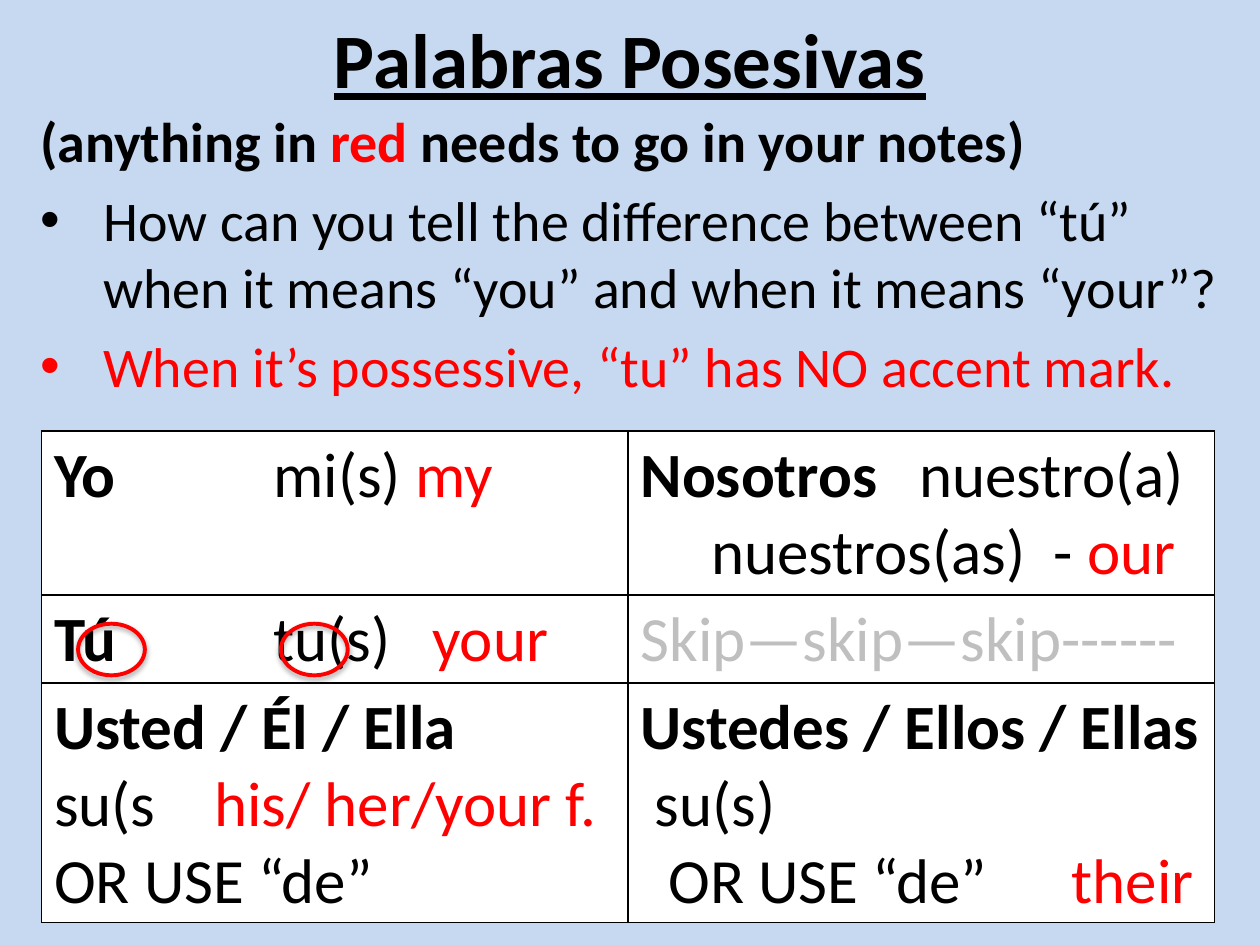
from dataclasses import dataclass

from lxml.etree import SubElement
from pptx import Presentation
from pptx.dml.color import RGBColor
from pptx.enum.shapes import MSO_SHAPE as Shape
from pptx.enum.text import MSO_ANCHOR as Anchor, PP_ALIGN as Align
from pptx.oxml.ns import qn
from pptx.util import Inches, Pt


@dataclass(frozen=True)
class Theme:
    font: str = "Calibri"
    title_size: int = 44
    body_size: int = 32
    table_size: int = 36
    background: str = "C6D9F1"
    black: str = "000000"
    white: str = "FFFFFF"
    red: str = "FF0000"
    gray: str = "BFBFBF"


THEME = Theme()
BOLD = {"bold": True}
RED = {"color": THEME.red}
GRAY = {"color": THEME.gray}

# Each cell is a list of (tab stops in inches, runs) paragraphs.
POSSESSIVES = [
    [
        [([1.74], [("Yo\t", BOLD), ("mi(s) ", {}), ("my", RED)])],
        [([0.56, 2.21, 3.28], [("Nosotros\t", BOLD),
                               ("nuestro(a)\n\tnuestros(as)\t- ", {}),
                               ("our", RED)])],
    ],
    [
        [([1.74, 3], [("Tú\t", BOLD), ("tu(s)\t", {}), ("your", RED)])],
        [([], [("Skip—skip—skip------", GRAY)])],
    ],
    [
        [([], [("Usted / Él / Ella", BOLD)]),
         ([1.27], [("su(s\t", {}), ("his/ her/your f.", RED)]),
         ([], [("OR USE “de”", {})])],
        [([], [("Ustedes / Ellos / Ellas", BOLD)]),
         ([0.22, 3.42], [(" su(s)\n\tOR USE “de”\t", {}), ("their", RED)])],
    ],
]


def add_run(paragraph, text, size, color=THEME.black, **formats):
    """Add text in the theme font, with a line break at each newline."""
    for number, line in enumerate(text.split("\n")):
        if number:
            paragraph.add_line_break()
        run = paragraph.add_run()
        run.text = line
        run.font.color.rgb = RGBColor.from_string(color)
        values = {"name": THEME.font, "size": Pt(size), "bold": False, **formats}
        for name, value in values.items():
            setattr(run.font, name, value)


def add_paragraphs(text_frame, count):
    return [text_frame.paragraphs[0]] + [
        text_frame.add_paragraph() for _ in range(count - 1)]


def add_text_box(slide, left, top, width, height, anchor=Anchor.TOP):
    box = slide.shapes.add_textbox(*map(Inches, (left, top, width, height)))
    box.text_frame.word_wrap = True
    box.text_frame.vertical_anchor = anchor
    return box.text_frame


def add_title(slide, text):
    paragraph = add_text_box(slide, 0, 0, 10, 0.92, Anchor.MIDDLE).paragraphs[0]
    paragraph.alignment = Align.CENTER
    add_run(paragraph, text, THEME.title_size, bold=True, underline=True)


def set_bullet(paragraph):
    properties = paragraph._p.get_or_add_pPr()
    properties.set("marL", str(Inches(0.5)))
    properties.set("indent", str(-Inches(0.5)))
    SubElement(properties, qn("a:buFont"), typeface="Arial")
    SubElement(properties, qn("a:buChar"), char="•")


def add_notes_text(slide):
    lines = [
        (False, [("(anything in ", BOLD), ("red ", BOLD | RED),
                 ("needs to go in your notes)", BOLD)]),
        (True, [("How can you tell the difference between “tú” when it means "
                 "“you” and when it means “your”?", {})]),
        (True, [("When it’s possessive, “tu” has NO accent mark.", RED)]),
    ]
    frame = add_text_box(slide, 0.22, 0.8, 9.78, 2.5)
    for paragraph, (bulleted, runs) in zip(add_paragraphs(frame, len(lines)), lines):
        paragraph.space_before = Pt(THEME.body_size * 0.2)
        if bulleted:
            set_bullet(paragraph)
        for text, formats in runs:
            add_run(paragraph, text, THEME.body_size, **formats)


def set_tab_stops(paragraph, stops):
    if stops:
        tabs = SubElement(paragraph._p.get_or_add_pPr(), qn("a:tabLst"))
        for stop in stops:
            SubElement(tabs, qn("a:tab"), pos=str(Inches(stop)), algn="l")


def set_borders(cell):
    properties = cell._tc.get_or_add_tcPr()
    for side in ("lnL", "lnR", "lnT", "lnB"):
        line = SubElement(properties, qn(f"a:{side}"), w=str(Pt(1)))
        fill = SubElement(line, qn("a:solidFill"))
        SubElement(fill, qn("a:srgbClr"), val=THEME.black)


def fill_cell(cell, paragraphs):
    set_borders(cell)
    cell.fill.solid()
    cell.fill.fore_color.rgb = RGBColor.from_string(THEME.white)
    targets = add_paragraphs(cell.text_frame, len(paragraphs))
    for paragraph, (stops, runs) in zip(targets, paragraphs):
        set_tab_stops(paragraph, stops)
        for text, formats in runs:
            add_run(paragraph, text, THEME.table_size, **formats)


def add_possessives_table(slide):
    heights = (1.3, 0.7, 1.9)
    frame = slide.shapes.add_table(len(heights), 2, Inches(0.33), Inches(3.42),
                                   Inches(9.31), Inches(sum(heights)))
    table = frame.table
    table.first_row = table.horz_banding = False
    for row, height, contents in zip(table.rows, heights, POSSESSIVES):
        row.height = Inches(height)
        for cell, paragraphs in zip(row.cells, contents):
            fill_cell(cell, paragraphs)


def add_soft_shadow(shape):
    effects = SubElement(shape._element.spPr, qn("a:effectLst"))
    shadow = SubElement(effects, qn("a:outerShdw"), blurRad=str(Pt(3.1)),
                        dist=str(Pt(1.8)), dir="5400000", rotWithShape="0")
    color = SubElement(shadow, qn("a:srgbClr"), val=THEME.black)
    SubElement(color, qn("a:alpha"), val="35000")


def add_circle_mark(slide, left):
    mark = slide.shapes.add_shape(
        Shape.OVAL, *map(Inches, (left, 4.95, 0.53, 0.41)))
    mark.fill.background()
    mark.line.color.rgb = RGBColor.from_string(THEME.red)
    mark.line.width = Pt(2.25)
    add_soft_shadow(mark)


def main():
    presentation = Presentation()
    presentation.slide_width, presentation.slide_height = Inches(10), Inches(7.5)
    slide = presentation.slides.add_slide(presentation.slide_layouts[6])
    slide.background.fill.solid()
    slide.background.fill.fore_color.rgb = RGBColor.from_string(THEME.background)

    add_title(slide, "Palabras Posesivas")
    add_notes_text(slide)
    add_possessives_table(slide)
    for left in (2.23, 0.62):
        add_circle_mark(slide, left)
    presentation.save("out.pptx")


if __name__ == "__main__":
    main()
